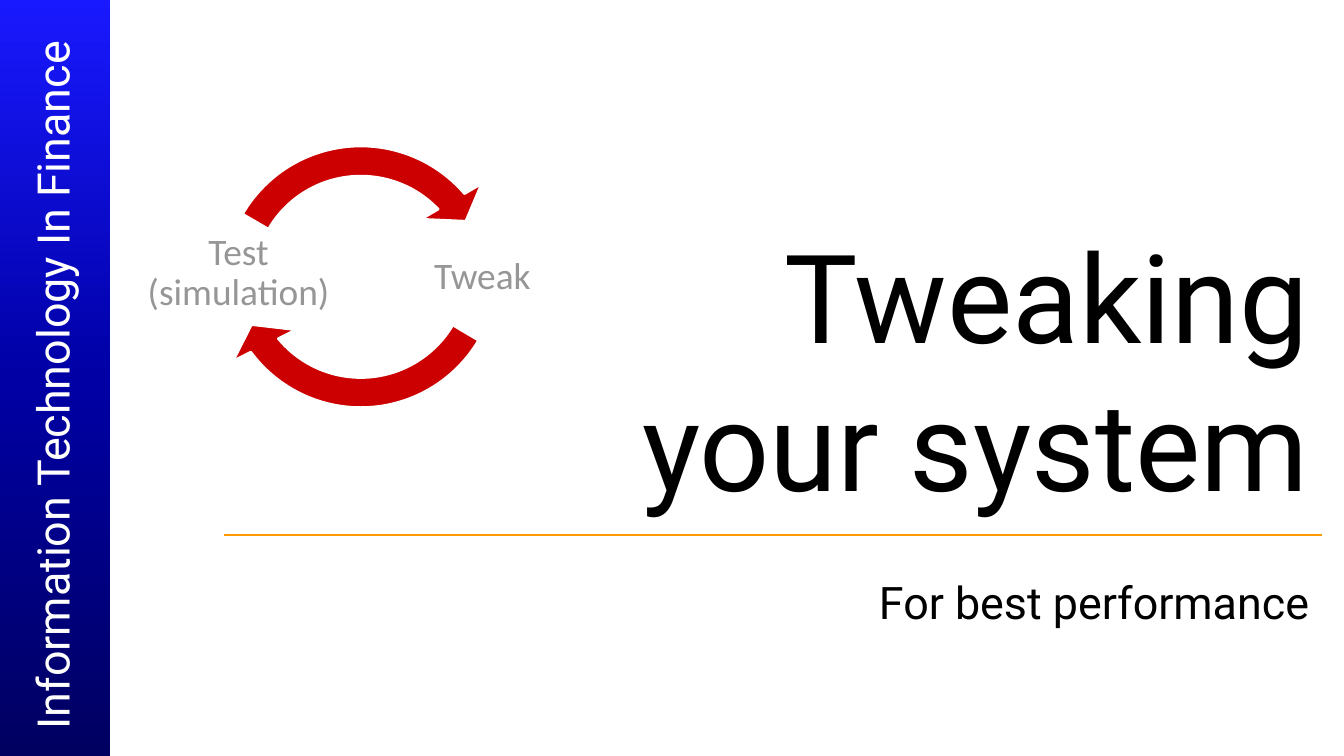
from copy import deepcopy
from dataclasses import dataclass

from pptx import Presentation
from pptx.dml.color import RGBColor
from pptx.enum.shapes import MSO_CONNECTOR, MSO_SHAPE
from pptx.enum.text import MSO_ANCHOR, PP_ALIGN
from pptx.oxml.ns import qn
from pptx.oxml.xmlchemy import OxmlElement
from pptx.util import Inches, Pt

RECT, ARROW = MSO_SHAPE.RECTANGLE, MSO_SHAPE.CIRCULAR_ARROW
LINE = MSO_CONNECTOR.STRAIGHT
LEFT, RIGHT, CENTER = PP_ALIGN.LEFT, PP_ALIGN.RIGHT, PP_ALIGN.CENTER
TOP, MIDDLE, BOTTOM = MSO_ANCHOR.TOP, MSO_ANCHOR.MIDDLE, MSO_ANCHOR.BOTTOM


@dataclass(frozen=True)
class Theme:
    """Slide size, column edges, fonts, type sizes and colours."""
    wide: float = 10
    high: float = 10 * 9 / 16
    bar: float = 0.82
    col: float = 1.67
    span: float = 8.17
    ring: float = 2.33
    sans: str = "Roboto"
    label: str = "Calibri"
    huge: int = 66
    body: int = 24
    small: int = 20
    fade: tuple = ("1919FF", "0000A5", "000060")
    ink: str = "000000"
    white: str = "FFFFFF"
    gray: str = "969696"
    red: str = "CC0000"
    gold: str = "FF9900"


T = Theme()


def tint(code):
    """Turn a hex code into a colour."""
    return RGBColor.from_string(code)


def apply(item, form):
    """Set each attribute named in a dict."""
    for name, value in form.items():
        setattr(item, name, value)


def add_text(slide, box, words, font, size, color, align, anchor=TOP, pad=None, para=None):
    """Add a wrapped text box holding one paragraph and return it."""
    shape = slide.shapes.add_textbox(*map(Inches, box))
    frame = shape.text_frame
    apply(frame, {"word_wrap": True, "vertical_anchor": anchor})
    if pad is not None:
        sides = ("left", "top", "right", "bottom")
        apply(frame, {f"margin_{side}": Inches(pad) for side in sides})
    line = frame.paragraphs[0]
    line.text = words
    apply(line, {"alignment": align, **(para or {})})
    for run in line.runs:
        apply(run.font, {"name": font, "size": Pt(size)})
        run.font.color.rgb = tint(color)
    return shape


def add_bar(slide):
    """Add the side bar with its gradient and upright course name."""
    bar = slide.shapes.add_shape(RECT, 0, 0, Inches(T.bar), Inches(T.high))
    bar.shadow.inherit = False
    bar.line.fill.background()
    bar.fill.gradient()
    bar.fill.gradient_angle = 270
    stops = bar._element.spPr.find(".//" + qn("a:gsLst"))
    stops.insert(1, deepcopy(stops[0]))
    for rank, (stop, code) in enumerate(zip(bar.fill.gradient_stops, T.fade)):
        stop.position = rank / 2
        stop.color.rgb = tint(code)
    name = add_text(slide, (-2.35, 2.54, 5.47, 0.5), "Information Technology In Finance",
                    T.sans, T.body, T.white, LEFT)
    name.rotation = 270


def add_rule(slide, top):
    """Add the thin rule between title and subtitle."""
    ends = (T.col, top, T.col + T.span, top)
    rule = slide.shapes.add_connector(LINE, *map(Inches, ends))
    rule.line.width = Pt(0.75)
    rule.line.color.rgb = tint(T.gold)
    rule._element.spPr.append(OxmlElement("a:effectLst"))


def add_arrow(slide, top, end, start):
    """Add one curved arrow of the cycle."""
    box = (1.52, top, T.ring, T.ring)
    arrow = slide.shapes.add_shape(ARROW, *map(Inches, box))
    arrow.shadow.inherit = False
    arrow.fill.solid()
    arrow.fill.fore_color.rgb = tint(T.red)
    arrow.line.width = Pt(1.25)
    arrow.line.color.rgb = tint(T.white)
    for rank, value in enumerate((0.095, 6.85, end, start, 0.111)):
        arrow.adjustments[rank] = value


def add_cycle(slide):
    """Add the two step cycle of arrows and labels."""
    for top, end, start in ((0.85, 85.36, 18.38), (0.94, 190.86, 126.15)):
        add_arrow(slide, top, end, start)
    para = {"line_spacing": 0.9, "space_after": Pt(0.35 * T.small)}
    for left, width, high, words in ((3.02, 1.14, 0.85, "Tweak"),
                                     (0.97, 1.61, 0.79, "Test (simulation)")):
        add_text(slide, (left, 1.64, width, high), words, T.label, T.small,
                 T.gray, CENTER, MIDDLE, 0.03, para)


def main():
    """Build the slide and save it."""
    deck = Presentation()
    apply(deck, {"slide_width": Inches(T.wide), "slide_height": Inches(T.high)})
    slide = deck.slides.add_slide(deck.slide_layouts[6])
    add_bar(slide)
    add_rule(slide, 3.98)
    add_text(slide, (T.col, 1.56, T.span, 2.33), "Tweaking\nyour system",
             T.sans, T.huge, T.ink, RIGHT, BOTTOM)
    add_text(slide, (T.col, 4.23, T.span, 0.92), "For best performance",
             T.sans, T.body, T.ink, RIGHT, para={"space_before": Pt(0.2 * T.body)})
    add_cycle(slide)
    deck.save("out.pptx")


if __name__ == "__main__":
    main()
